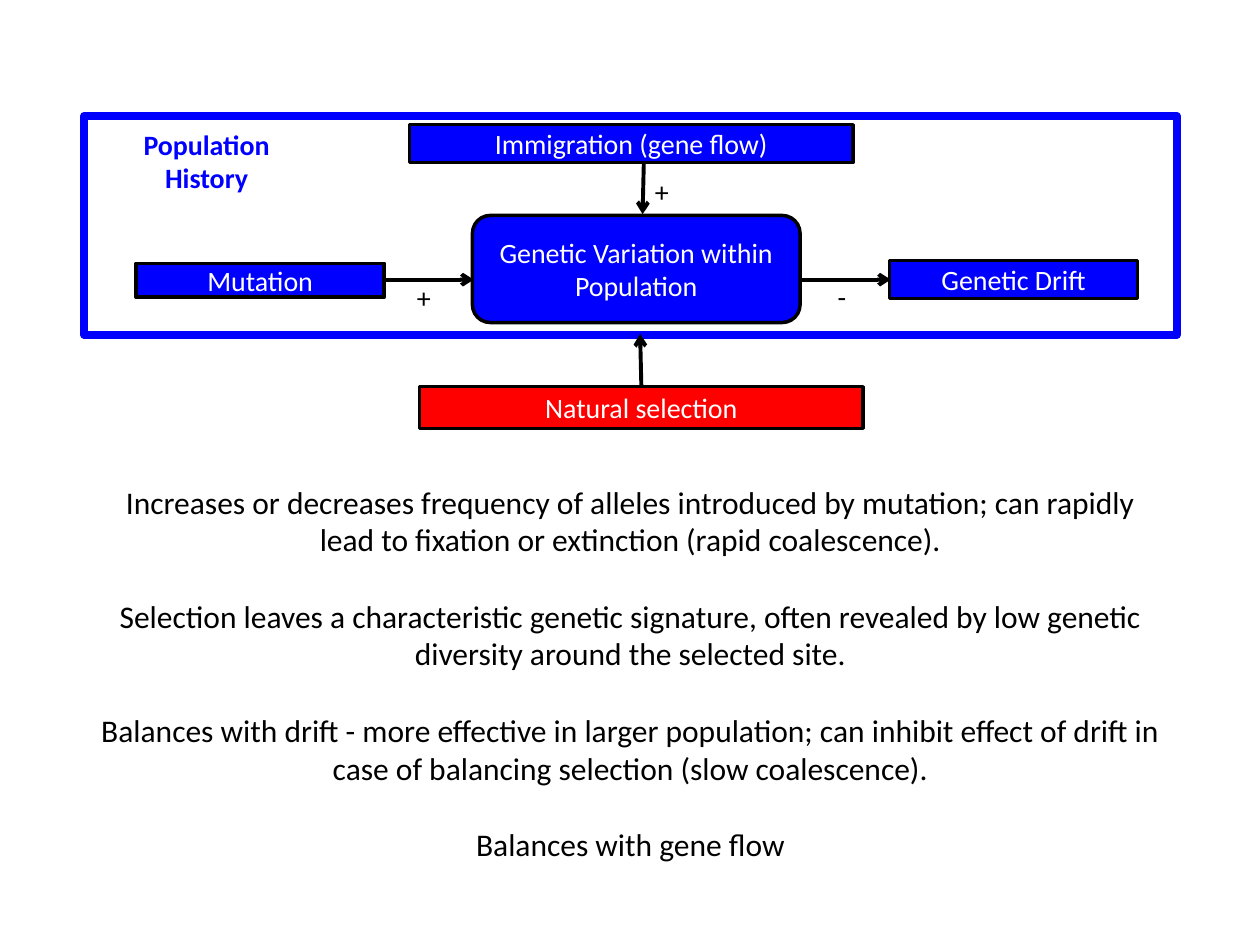
"""Build a slide on the forces acting on genetic variation within a population."""
from lxml import etree
from pptx import Presentation
from pptx.dml.color import RGBColor
from pptx.enum.shapes import MSO_CONNECTOR, MSO_SHAPE
from pptx.enum.text import MSO_ANCHOR, PP_ALIGN
from pptx.oxml.ns import qn
from pptx.util import Pt

RECTANGLE = MSO_SHAPE.RECTANGLE
ROUNDED = MSO_SHAPE.ROUNDED_RECTANGLE
STRAIGHT = MSO_CONNECTOR.STRAIGHT
MIDDLE, TOP = MSO_ANCHOR.MIDDLE, MSO_ANCHOR.TOP
CENTER, LEFT = PP_ALIGN.CENTER, PP_ALIGN.LEFT

THEME = {
    "font": "Calibri",
    "blue": RGBColor(0, 0, 255),
    "red": RGBColor(255, 0, 0),
    "black": RGBColor(0, 0, 0),
    "white": RGBColor(255, 255, 255),
    "label": 16,
    "body": 18,
    "box_line": 2,
    "arrow_line": 2.25,
    "frame_line": 4.5,
}

FRAME = (48.2, 66.2, 624.2, 125.3)
BOXES = [
    ("Genetic Variation within Population", ROUNDED, "blue", (270, 123.1, 187.2, 61.2)),
    ("Mutation", RECTANGLE, "blue", (77.8, 150.5, 141.8, 19.4)),
    ("Genetic Drift", RECTANGLE, "blue", (508.3, 149, 141.8, 21.6)),
    ("Immigration (gene flow)", RECTANGLE, "blue", (234, 71.3, 253.4, 21.6)),
    ("Natural selection", RECTANGLE, "red", (239.8, 221, 253.4, 23.8)),
]
ARROWS = [
    (219.6, 159.8, 270.7, 159.8),
    (457.9, 159.8, 509, 159.8),
    (367.9, 93.6, 367.2, 122.4),
    (366.5, 221, 365.8, 190.8),
]
SIGNS = [
    ("+", (231.1, 157, 23.8, 26.6)),
    ("-", (471.6, 156.2, 20.2, 26.6)),
    ("+", (367.2, 96.5, 23.8, 26.6)),
]
HEADING = (["Population", "History"], (69.1, 69.1, 97.9, 46.1))
NOTES = [
    "Increases or decreases frequency of alleles introduced by mutation; "
    "can rapidly lead to fixation or extinction (rapid coalescence).",
    "Selection leaves a characteristic genetic signature, often revealed by "
    "low genetic diversity around the selected site.",
    "Balances with drift - more effective in larger population; can inhibit "
    "effect of drift in case of balancing selection (slow coalescence).",
    "Balances with gene flow",
]
NOTES_AREA = (48.2, 272.2, 624.2, 290.9)
NOTES_GAP = 22


def points(values):
    return [Pt(value) for value in values]


def write(shape, lines, color, size="label", align=CENTER, anchor=TOP,
          bold=False, wrap=True, gap=0):
    frame = shape.text_frame
    frame.text = "\n".join(lines)
    frame.word_wrap = wrap
    frame.vertical_anchor = anchor
    for index, paragraph in enumerate(frame.paragraphs):
        paragraph.alignment = align
        if index and gap:
            paragraph.space_before = Pt(gap)
        for run in paragraph.runs:
            run.font.name = THEME["font"]
            run.font.size = Pt(THEME[size])
            run.font.bold = bold
            run.font.color.rgb = THEME[color]


def add_box(slide, kind, area, line_color, line_width, fill=None):
    shape = slide.shapes.add_shape(kind, *points(area))
    shape.shadow.inherit = False
    if fill:
        shape.fill.solid()
        shape.fill.fore_color.rgb = THEME[fill]
    else:
        shape.fill.background()
    shape.line.color.rgb = THEME[line_color]
    shape.line.width = Pt(THEME[line_width])
    return shape


def add_arrow(slide, ends):
    connector = slide.shapes.add_connector(STRAIGHT, *points(ends))
    connector.line.color.rgb = THEME["black"]
    connector.line.width = Pt(THEME["arrow_line"])
    properties = connector._element.spPr
    etree.SubElement(properties.find(qn("a:ln")), qn("a:tailEnd"), type="arrow")
    etree.SubElement(properties, qn("a:effectLst"))


def add_text(slide, lines, area, color, **style):
    write(slide.shapes.add_textbox(*points(area)), lines, color, **style)


def main():
    presentation = Presentation()
    presentation.slide_width, presentation.slide_height = Pt(720), Pt(540)
    slide = presentation.slides.add_slide(presentation.slide_layouts[6])

    add_box(slide, RECTANGLE, FRAME, "blue", "frame_line")
    for label, kind, fill, area in BOXES:
        box = add_box(slide, kind, area, "black", "box_line", fill)
        write(box, [label], "white", anchor=MIDDLE)
    for ends in ARROWS:
        add_arrow(slide, ends)
    for sign, area in SIGNS:
        add_text(slide, [sign], area, "black", align=LEFT, wrap=False)
    add_text(slide, *HEADING, "blue", bold=True, wrap=False)
    add_text(slide, NOTES, NOTES_AREA, "black", size="body", gap=NOTES_GAP)

    presentation.save("out.pptx")


if __name__ == "__main__":
    main()
